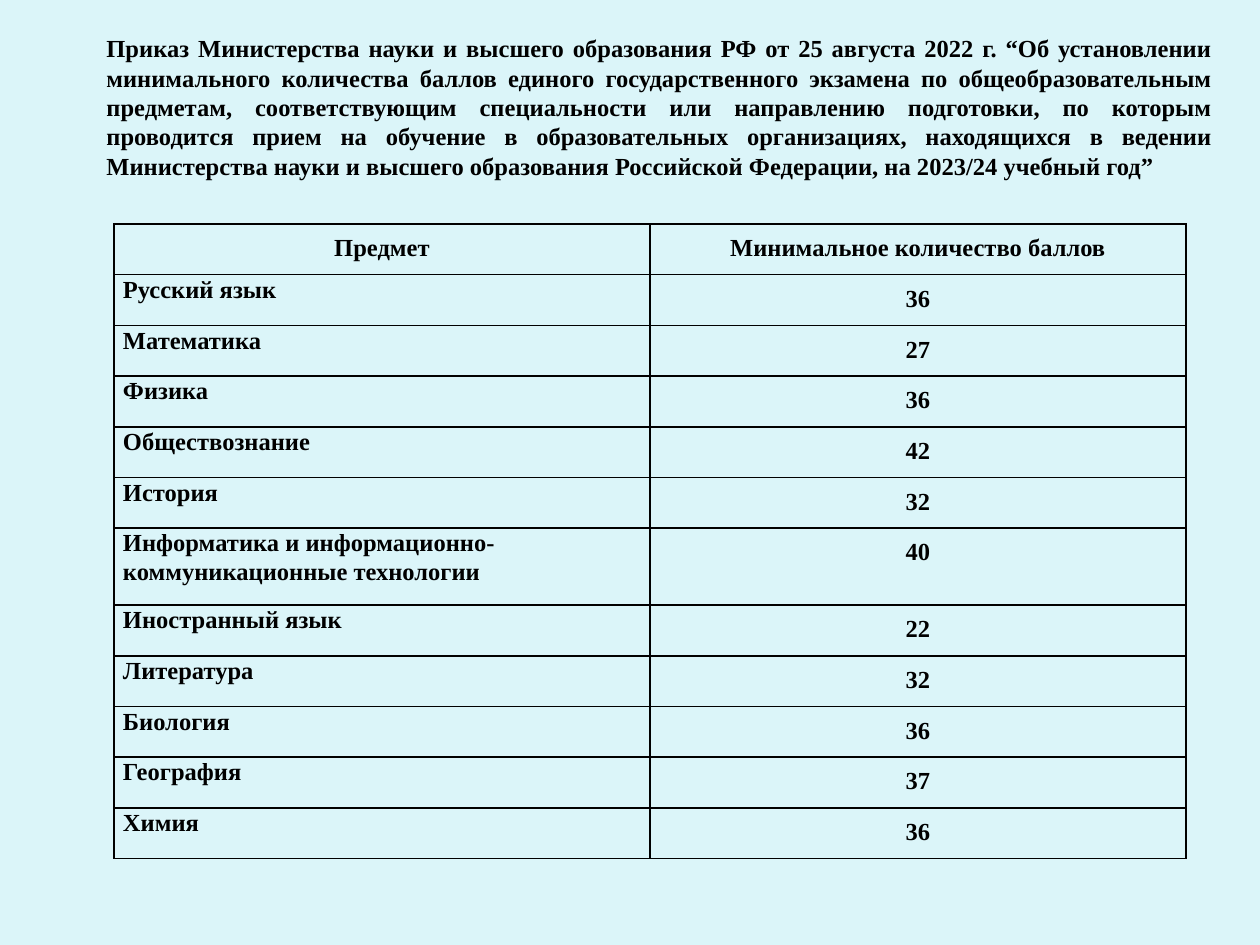
from lxml.etree import SubElement
from pptx import Presentation
from pptx.dml.color import RGBColor
from pptx.enum.text import PP_ALIGN
from pptx.oxml import parse_xml
from pptx.oxml.ns import nsdecls, qn
from pptx.util import Pt

PX = 914400 // 126
FONT = "Times New Roman"
BACKGROUND = "DBF5F9"
BLACK = "000000"

TITLE = (
    "Приказ Министерства науки и высшего образования РФ от 25 августа 2022 г. "
    "“Об установлении минимального количества баллов единого государственного экзамена "
    "по общеобразовательным предметам, соответствующим специальности или направлению "
    "подготовки, по которым проводится прием на обучение в образовательных организациях, "
    "находящихся в ведении Министерства науки и высшего образования Российской Федерации, "
    "на 2023/24 учебный год”"
)
HEADER = ("Предмет", "Минимальное количество баллов")
SCORES = [
    ("Русский язык", 36),
    ("Математика", 27),
    ("Физика", 36),
    ("Обществознание", 42),
    ("История", 32),
    ("Информатика и информационно-коммуникационные технологии", 40),
    ("Иностранный язык", 22),
    ("Литература", 32),
    ("Биология", 36),
    ("География", 37),
    ("Химия", 36),
]
TALL_ROW = 6
TALL_HEIGHT = 77


def px(n):
    return round(n * PX)


def rgb(color):
    return RGBColor.from_string(color)


def write(tf, text, align, spacing=None):
    p = tf.paragraphs[0]
    p.text = text
    p.alignment = align
    p.line_spacing = spacing
    p.font.name = FONT
    p.font.size = Pt(14)
    p.font.bold = True
    p.font.color.rgb = rgb(BLACK)


def add_title(s, left, top, width, height):
    tf = s.shapes.add_textbox(px(left), px(top), px(width), px(height)).text_frame
    tf.word_wrap = True
    write(tf, TITLE, PP_ALIGN.JUSTIFY)


def set_borders(cell):
    tc_pr = cell._tc.get_or_add_tcPr()
    for i, side in enumerate(("lnL", "lnR", "lnT", "lnB")):
        ln = parse_xml(f'<a:{side} {nsdecls("a")} w="{Pt(1)}"/>')
        fill = SubElement(ln, qn("a:solidFill"))
        SubElement(fill, qn("a:srgbClr"), val=BLACK)
        tc_pr.insert(i, ln)


def fill_cell(cell, text, centered):
    cell.margin_left = cell.margin_right = px(9)
    cell.margin_top = cell.margin_bottom = 0
    cell.fill.background()
    set_borders(cell)
    if centered:
        write(cell.text_frame, text, PP_ALIGN.CENTER, 1.4)
    else:
        write(cell.text_frame, text, PP_ALIGN.LEFT, 1.07)


def add_score_table(s, left, top, width, height):
    rows = [HEADER, *SCORES]
    table = s.shapes.add_table(
        len(rows), len(HEADER), px(left), px(top), px(width), px(height)
    ).table
    table.horz_banding = False
    row_height = (height - TALL_HEIGHT) / (len(rows) - 1)
    for r, values in enumerate(rows):
        table.rows[r].height = px(TALL_HEIGHT if r == TALL_ROW else row_height)
        for c, value in enumerate(values):
            fill_cell(table.cell(r, c), str(value), centered=r == 0 or c == 1)


def main():
    prs = Presentation()
    prs.slide_width = px(1260)
    prs.slide_height = px(945)
    s = prs.slides.add_slide(prs.slide_layouts[6])
    s.background.fill.solid()
    s.background.fill.fore_color.rgb = rgb(BACKGROUND)
    add_score_table(s, 114, 224, 1072, 635)
    add_title(s, 94, 27, 1131, 161)
    prs.save("out.pptx")


if __name__ == "__main__":
    main()
